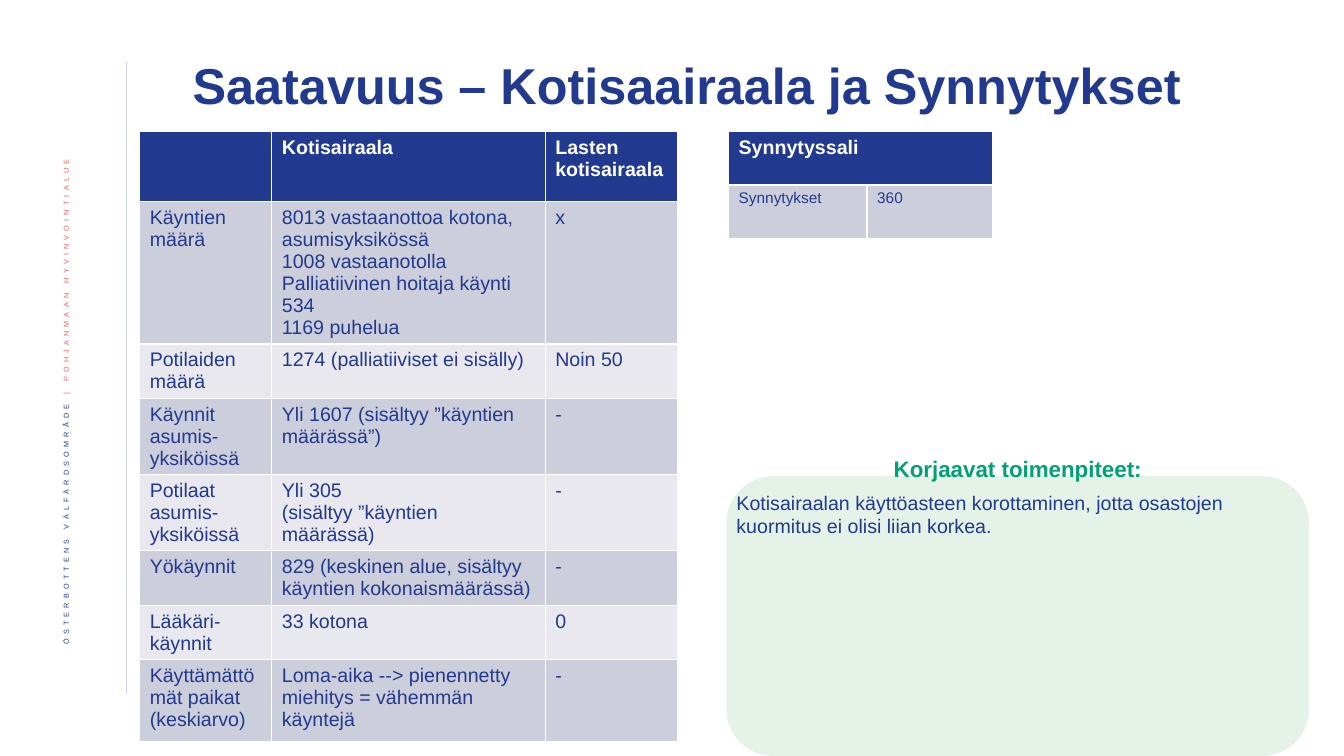
import pptx
import pptx.dml.color
import pptx.enum.shapes
import pptx.enum.text
import pptx.oxml.ns
import pptx.util
from lxml import etree

Cm = pptx.util.Cm
Pt = pptx.util.Pt
ALIGN = pptx.enum.text.PP_ALIGN
ANCHOR = pptx.enum.text.MSO_ANCHOR
COLORS = {
    "navy": "213A8F", "white": "FFFFFF", "coral": "EB5C5F", "rule": "C9D2F2",
    "band_dark": "CDCEDB", "band_light": "E8E8EE", "mint": "85C598", "green": "00A174",
}


def set_font(font, size, color, bold=False):
    font.name = "Arial"
    font.size = Pt(size)
    font.bold = bold
    font.color.rgb = pptx.dml.color.RGBColor.from_string(COLORS[color])


def add_table(slide, left, top, widths, heights, rows, body_size):
    size = Cm(sum(widths)), Cm(sum(heights))
    table = slide.shapes.add_table(len(rows), len(widths), Cm(left), Cm(top), *size).table
    for column, width in zip(table.columns, widths):
        column.width = Cm(width)
    for i, (height, texts) in enumerate(zip(heights, rows)):
        table.rows[i].height = Cm(height)
        fill = "navy" if i == 0 else "band_dark" if i % 2 else "band_light"
        for cell, text in zip(table.rows[i].cells, texts):
            cell.fill.solid()
            cell.fill.fore_color.rgb = pptx.dml.color.RGBColor.from_string(COLORS[fill])
            cell.text = text
            for p in cell.text_frame.paragraphs:
                if i == 0:
                    set_font(p.font, 14, "white", True)
                else:
                    set_font(p.font, body_size, "navy")
    return table


prs = pptx.Presentation()
prs.slide_width, prs.slide_height = Cm(33.87), Cm(19.05)
s = prs.slides.add_slide(prs.slide_layouts[5])

# Vertical rule
rule = s.shapes.add_connector(
    pptx.enum.shapes.MSO_CONNECTOR.STRAIGHT, Cm(3.19), Cm(1.55), Cm(3.19), Cm(17.48))
rule.line.color.rgb = pptx.dml.color.RGBColor.from_string(COLORS["rule"])
rule.line.width = Pt(0.5)
etree.SubElement(rule._element.spPr, pptx.oxml.ns.qn("a:effectLst"))

# Sideways organisation name
side = s.shapes.add_textbox(Cm(1.07), Cm(3.61), Cm(1.32), Cm(14.55))
tf = side.text_frame
tf.word_wrap = True
tf.vertical_anchor = ANCHOR.MIDDLE
tf._txBody.bodyPr.set("vert", "vert270")
p = tf.paragraphs[0]
p.alignment = ALIGN.RIGHT
p.line_spacing = 0.9
for text, color in (("ÖSTERBOTTENS VÄLFÄRDSOMRÅDE ", "navy"),
                    ("| POHJANMAAN HYVINVOINTIALUE ", "coral")):
    r = p.add_run()
    r.text = text
    set_font(r.font, 9, color)
    r.font._element.set("baseline", "30000")
    r.font._element.set("spc", "300")

# Title
title = s.shapes.title
title.left, title.top, title.width, title.height = Cm(4.6), Cm(1.14), Cm(27.89), Cm(2.16)
tf = title.text_frame
tf.text = "Saatavuus – Kotisaairaala ja Synnytykset"
tf.word_wrap = True
tf.auto_size = pptx.enum.text.MSO_AUTO_SIZE.NONE
tf.vertical_anchor = ANCHOR.MIDDLE
p = tf.paragraphs[0]
p.alignment = ALIGN.LEFT
p.line_spacing = 0.9
set_font(p.font, 36, "navy", True)

# Home hospital table
home_rows = [
    ("", "Kotisairaala", "Lasten kotisairaala"),
    ("Käyntien määrä",
     "8013 vastaanottoa kotona, asumisyksikössä\n1008 vastaanotolla\n"
     "Palliatiivinen hoitaja käynti 534\n1169 puhelua", "x"),
    ("Potilaiden määrä", "1274 (palliatiiviset ei sisälly)", "Noin 50"),
    ("Käynnit asumis-yksiköissä", "Yli 1607 (sisältyy ”käyntien määrässä”)", "-"),
    ("Potilaat asumis-yksiköissä", "Yli 305\n(sisältyy ”käyntien määrässä)", "-"),
    ("Yökäynnit", "829 (keskinen alue, sisältyy käyntien kokonaismäärässä)", "-"),
    ("Lääkäri-käynnit", "33 kotona", "0"),
    ("Käyttämättömät paikat (keskiarvo)",
     "Loma-aika --> pienennetty miehitys = vähemmän käyntejä", "-"),
]
add_table(s, 3.52, 3.32, (3.33, 6.89, 3.33),
          (1.75, 3.6, 1.37, 1.92, 1.92, 1.37, 1.37, 2.06), home_rows, 14)

# Delivery room table
births = add_table(s, 18.36, 3.32, (3.49, 3.17), (1.34, 1.34),
                   [("Synnytyssali", ""), ("Synnytykset", "360")], 11)
births.cell(0, 0).merge(births.cell(0, 1))

# Corrective actions panel
panel = s.shapes.add_shape(pptx.enum.shapes.MSO_SHAPE.ROUNDED_RECTANGLE,
                           Cm(18.31), Cm(12), Cm(14.68), Cm(7.05))
panel.shadow.inherit = False
panel.line.fill.background()
panel.fill.solid()
panel.fill.fore_color.rgb = pptx.dml.color.RGBColor.from_string(COLORS["mint"])
mint = panel._element.spPr.find(".//" + pptx.oxml.ns.qn("a:srgbClr"))
etree.SubElement(mint, pptx.oxml.ns.qn("a:alpha")).set("val", "22000")

actions = s.shapes.add_textbox(Cm(18.31), Cm(11.35), Cm(14.68), Cm(4.32))
tf = actions.text_frame
tf.word_wrap = True
p = tf.paragraphs[0]
p.text = "Korjaavat toimenpiteet:"
p.alignment = ALIGN.CENTER
p.space_after = Pt(6)
set_font(p.font, 16, "green", True)
p = tf.add_paragraph()
p.text = ("Kotisairaalan käyttöasteen korottaminen, jotta osastojen "
          "kuormitus ei olisi liian korkea.")
set_font(p.font, 14, "navy")

prs.save("out.pptx")
